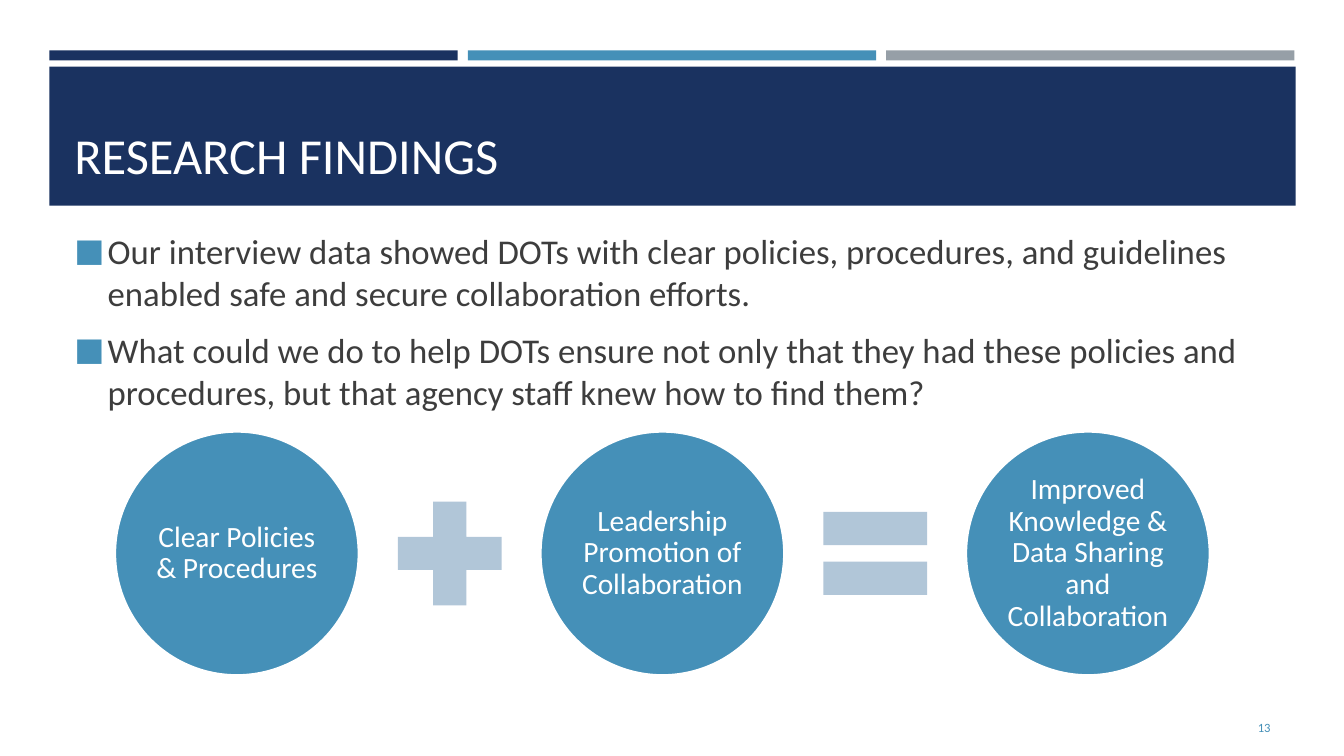
"""Build the research findings slide, with all lengths in percent of the slide's size."""
from dataclasses import dataclass

from lxml import etree
from pptx import Presentation
from pptx import util as u
from pptx.dml.color import RGBColor
from pptx.enum import shapes, text
from pptx.oxml.ns import qn

WIDTH, HEIGHT = u.Inches(13.33), u.Inches(7.5)
FONT = "Calibri"
COLORS = {
    "navy": "1A3260",
    "blue": "4590B8",
    "gray": "969FA7",
    "pale": "B1C6D8",
    "ink": "3D3D3D",
    "white": "FFFFFF",
}
COLUMN_STEP = 31.66
BAR_STEP = 31.13


@dataclass(frozen=True)
class Box:
    x: float
    y: float
    w: float
    h: float

    def shifted(self, dx: float) -> "Box":
        return Box(self.x + dx, self.y, self.w, self.h)

    def emu(self) -> tuple[int, int, int, int]:
        return (int(WIDTH * self.x / 100), int(HEIGHT * self.y / 100),
                int(WIDTH * self.w / 100), int(HEIGHT * self.h / 100))


@dataclass(frozen=True)
class Block:
    box: Box
    kind: shapes.MSO_SHAPE
    fill: str
    outline: str = ""
    label: str = ""


BAR = Box(3.68, 6.67, 30.38, 1.33)
BANNER = Box(3.68, 8.8, 92.72, 18.4)
TITLE = Box(4.8, 10.67, 90.47, 14.4)
BODY = Box(4.8, 31.73, 88.97, 21.47)
CIRCLE = Box(8.55, 57.07, 18.15, 32.27)
OPERATOR = Box(28.21, 63.87, 10.5, 18.67)
NUMBER = Box(86.65, 93.6, 8.63, 5.33)

FINDINGS = [
    "Our interview data showed DOTs with clear policies, procedures, and guidelines "
    "enabled safe and secure collaboration efforts.",
    "What could we do to help DOTs ensure not only that they had these policies and "
    "procedures, but that agency staff knew how to find them?",
]
TERMS = [
    "Clear Policies & Procedures",
    "Leadership Promotion of Collaboration",
    "Improved Knowledge & Data Sharing and Collaboration",
]
OPERATORS = [shapes.MSO_SHAPE.MATH_PLUS, shapes.MSO_SHAPE.MATH_EQUAL]


def rgb(name: str) -> RGBColor:
    return RGBColor.from_string(COLORS[name])


def add_bullet(p, color: str) -> None:
    pPr = p._p.get_or_add_pPr()
    pPr.set("marL", str(u.Inches(0.33)))
    pPr.set("indent", str(-u.Inches(0.33)))
    buClr = etree.SubElement(pPr, qn("a:buClr"))
    etree.SubElement(buClr, qn("a:srgbClr"), val=COLORS[color])
    etree.SubElement(pPr, qn("a:buSzPct"), val="92000")
    etree.SubElement(pPr, qn("a:buFont"), typeface=FONT)
    etree.SubElement(pPr, qn("a:buChar"), char="■")


def write(sp, *paragraphs: str, size: float, color: str = "white",
          align=text.PP_ALIGN.LEFT, anchor=text.MSO_ANCHOR.MIDDLE,
          inset: float | None = None, line: float = 1.0,
          before: float = 0, after: float = 0, bullet: str = "") -> None:
    tf = sp.text_frame
    tf.word_wrap = True
    tf.vertical_anchor = anchor
    if inset is not None:
        tf.margin_left = tf.margin_right = u.Inches(inset)
        tf.margin_top = tf.margin_bottom = u.Inches(inset)
    for i, words in enumerate(paragraphs):
        p = tf.add_paragraph() if i else tf.paragraphs[0]
        p.alignment = align
        p.line_spacing = line
        p.space_before, p.space_after = u.Pt(before), u.Pt(after)
        if bullet:
            add_bullet(p, bullet)
        r = p.add_run()
        r.text = words
        r.font.name, r.font.size = FONT, u.Pt(size)
        r.font.color.rgb = rgb(color)


def draw(s, block: Block) -> None:
    sp = s.shapes.add_shape(block.kind, *block.box.emu())
    sp.shadow.inherit = False
    sp.fill.solid()
    sp.fill.fore_color.rgb = rgb(block.fill)
    if block.outline:
        sp.line.color.rgb = rgb(block.outline)
        sp.line.width = u.Pt(1.75)
    else:
        sp.line.fill.background()
    if block.label:
        write(sp, block.label, size=21, align=text.PP_ALIGN.CENTER, inset=0.03, line=0.9)


def main() -> None:
    prs = Presentation()
    prs.slide_width, prs.slide_height = WIDTH, HEIGHT
    s = prs.slides.add_slide(prs.slide_layouts[6])

    rect, oval = shapes.MSO_SHAPE.RECTANGLE, shapes.MSO_SHAPE.OVAL
    blocks = [Block(BAR.shifted(i * BAR_STEP), rect, color)
              for i, color in enumerate(["navy", "blue", "gray"])]
    blocks.append(Block(BANNER, rect, "navy"))
    blocks += [Block(CIRCLE.shifted(i * COLUMN_STEP), oval, "blue", "white", term)
               for i, term in enumerate(TERMS)]
    blocks += [Block(OPERATOR.shifted(i * COLUMN_STEP), kind, "pale")
               for i, kind in enumerate(OPERATORS)]
    for block in blocks:
        draw(s, block)

    write(s.shapes.add_textbox(*TITLE.emu()), "RESEARCH FINDINGS",
          size=36, anchor=text.MSO_ANCHOR.BOTTOM)
    write(s.shapes.add_textbox(*BODY.emu()), *FINDINGS,
          size=24.8, color="ink", before=5, after=6, bullet="blue")
    write(s.shapes.add_textbox(*NUMBER.emu()), "13",
          size=9, color="blue", align=text.PP_ALIGN.RIGHT)
    prs.save("out.pptx")


if __name__ == "__main__":
    main()
